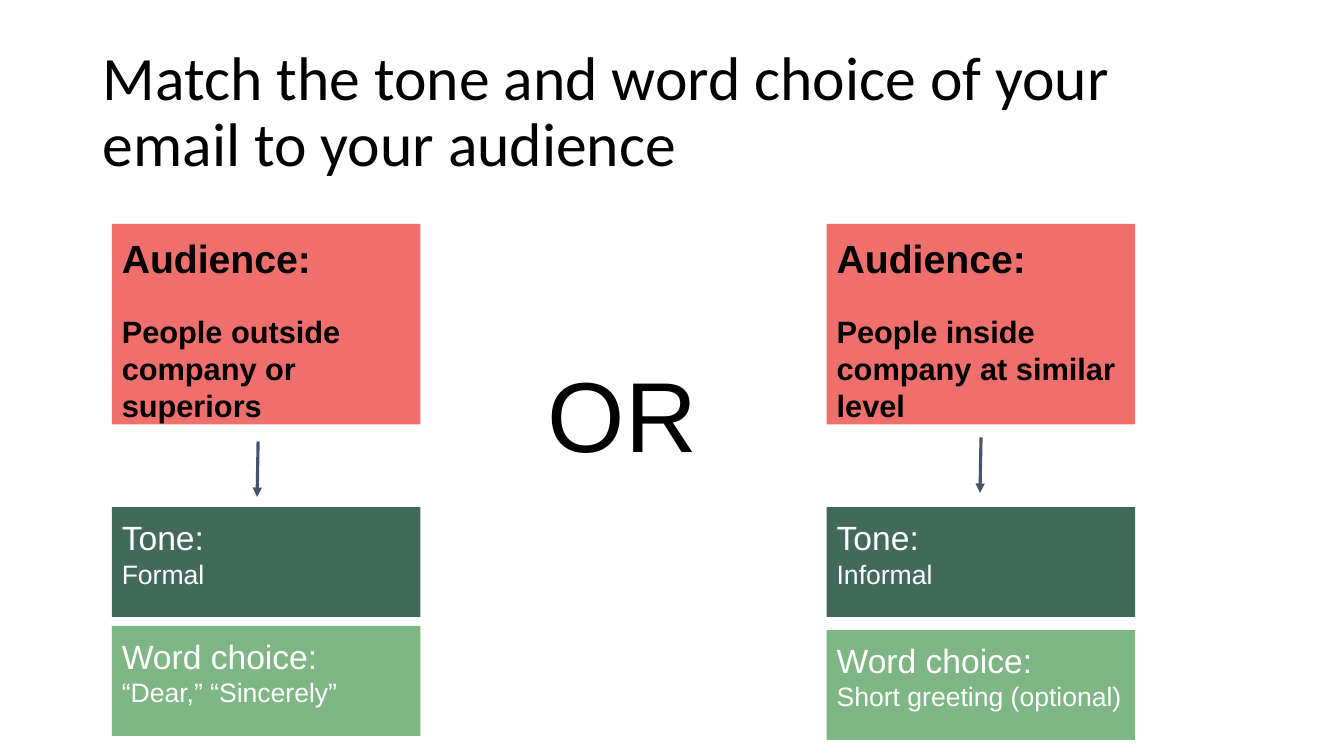
"""Build a slide on matching the tone of an email to its audience."""
import pptx
import pptx.util
import pptx.dml.color
import pptx.enum.shapes
import pptx.enum.text
import pptx.oxml.ns
from lxml import etree

Inches, Pt = pptx.util.Inches, pptx.util.Pt
RGBColor = pptx.dml.color.RGBColor
PP_ALIGN = pptx.enum.text.PP_ALIGN
ANCHOR = pptx.enum.text.MSO_ANCHOR

BLACK = RGBColor(0x00, 0x00, 0x00)
WHITE = RGBColor(0xFF, 0xFF, 0xFF)
CORAL = RGBColor(0xEF, 0x6F, 0x6C)
DARK_GREEN = RGBColor(0x42, 0x6A, 0x5A)
LIGHT_GREEN = RGBColor(0x7F, 0xB6, 0x85)
SLATE = RGBColor(0x44, 0x54, 0x6A)


def write(sp, lines, color=BLACK, font="Arial", bold=False, align=PP_ALIGN.LEFT,
          anchor=ANCHOR.TOP, inset=0.1, gap=0, spacing=None):
    tf = sp.text_frame
    tf.word_wrap = True
    tf.auto_size = pptx.enum.text.MSO_AUTO_SIZE.NONE
    tf.vertical_anchor = anchor
    tf.margin_left = tf.margin_right = Inches(0.1)
    tf.margin_top = tf.margin_bottom = Inches(inset)
    for i, (text, size) in enumerate(lines):
        p = tf.add_paragraph() if i else tf.paragraphs[0]
        p.alignment = align
        p.line_spacing = spacing
        if i and gap:
            p.space_before = Pt(gap)
        r = p.add_run()
        r.text = text
        r.font.name, r.font.size, r.font.bold = font, Pt(size), bold
        r.font.color.rgb = color


prs = pptx.Presentation()
prs.slide_width, prs.slide_height = Inches(13.33), Inches(7.5)
s = prs.slides.add_slide(prs.slide_layouts[5])

title = s.shapes.title
title.left, title.top = Inches(0.92), Inches(0.4)
title.width, title.height = Inches(11.5), Inches(1.45)
write(title, [("Match the tone and word choice of your email to your audience", 44)],
      font="Calibri", anchor=ANCHOR.MIDDLE, inset=0.05, spacing=0.9)

columns = [
    (1.11, 6.21, 2.56, 4.38, "People outside company or superiors", "Formal",
     "“Dear,” “Sincerely”"),
    (8.2, 6.25, 9.73, 4.34, "People inside company at similar level", "Informal",
     "Short greeting (optional)"),
]
for left, words_top, arrow_x, arrow_y, audience, tone, words in columns:
    boxes = [
        (2.22, 1.99, CORAL, BLACK, True, 23, [("Audience:", 28), (audience, 22)]),
        (5.03, 1.09, DARK_GREEN, WHITE, False, 0, [("Tone:", 24), (tone, 19)]),
        (words_top, 1.09, LIGHT_GREEN, WHITE, False, 0, [("Word choice:", 24), (words, 19)]),
    ]
    for top, height, fill, color, bold, gap, lines in boxes:
        sp = s.shapes.add_shape(pptx.enum.shapes.MSO_SHAPE.RECTANGLE, Inches(left),
                                Inches(top), Inches(3.06), Inches(height))
        sp.shadow.inherit = False
        sp.fill.solid()
        sp.fill.fore_color.rgb = fill
        sp.line.fill.background()
        write(sp, lines, color=color, bold=bold, gap=gap)

    arrow = s.shapes.add_connector(
        pptx.enum.shapes.MSO_CONNECTOR.STRAIGHT, Inches(arrow_x), Inches(arrow_y),
        Inches(arrow_x - 0.01), Inches(arrow_y + 0.55))
    arrow.line.color.rgb = SLATE
    arrow.line.width = Pt(2.25)
    ln = arrow.line._get_or_add_ln()
    etree.SubElement(ln, pptx.oxml.ns.qn("a:tailEnd"), type="triangle")
    etree.SubElement(arrow._element.spPr, pptx.oxml.ns.qn("a:effectLst"))

sp = s.shapes.add_textbox(Inches(4.95), Inches(3.4), Inches(2.45), Inches(2.51))
write(sp, [("OR", 71)], align=PP_ALIGN.CENTER)

prs.save("out.pptx")
